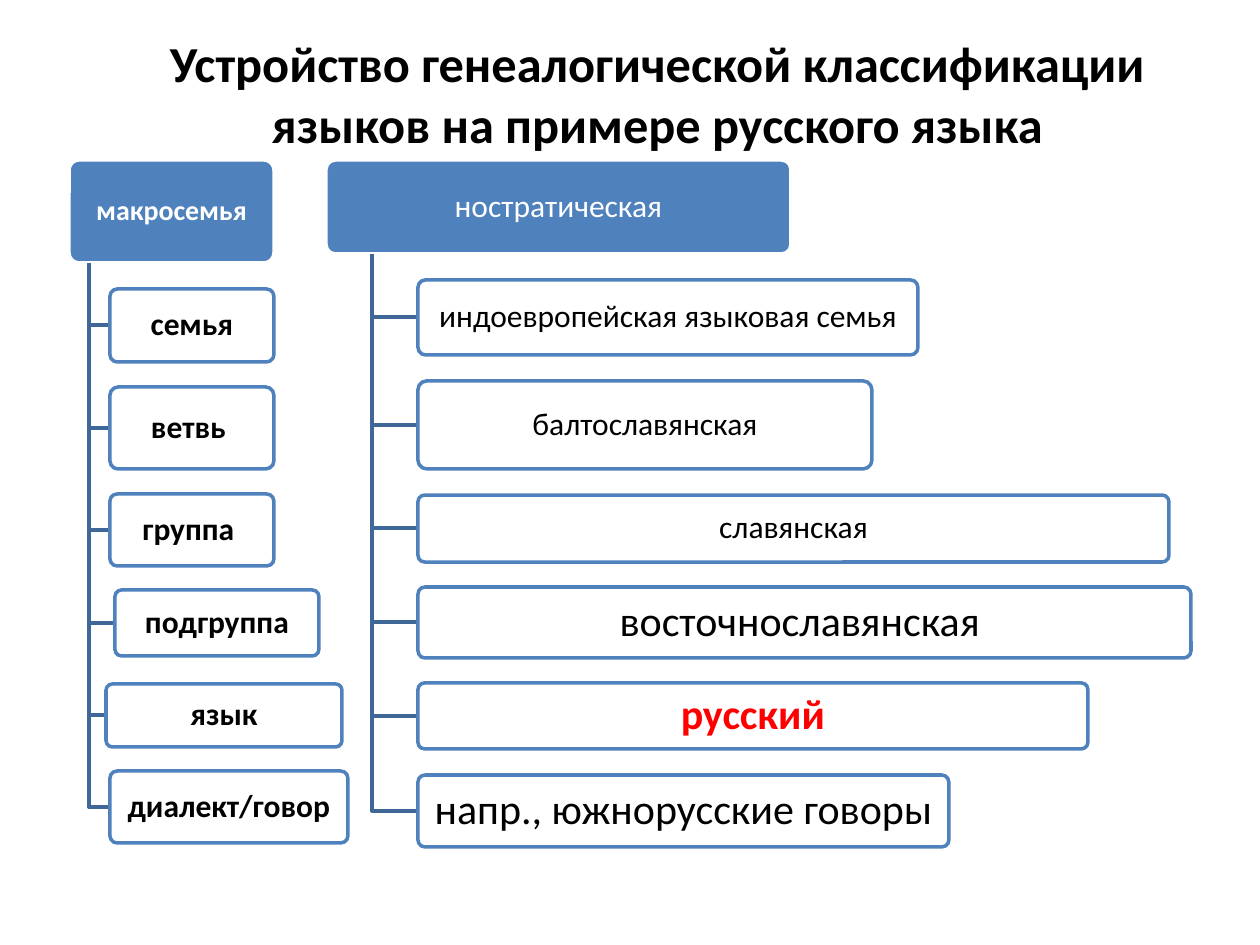
from dataclasses import dataclass

from lxml.etree import SubElement
from pptx import Presentation
from pptx.dml.color import RGBColor as Rgb
from pptx.enum.shapes import MSO_SHAPE as Preset
from pptx.enum.text import MSO_ANCHOR as Anchor, MSO_AUTO_SIZE as AutoSize, PP_ALIGN as Align
from pptx.oxml.ns import qn
from pptx.slide import Slide
from pptx.text.text import TextFrame
from pptx.util import Emu, Pt

PX_PER_INCH = 126


@dataclass(frozen=True)
class Theme:
    font: str = "Calibri"
    ink: Rgb = Rgb(0, 0, 0)
    paper: Rgb = Rgb(0xFF, 0xFF, 0xFF)
    accent: Rgb = Rgb(0x4F, 0x81, 0xBD)
    branch: Rgb = Rgb(0x3F, 0x67, 0x97)
    highlight: Rgb = Rgb(0xFF, 0, 0)
    title_size: float = 28.8
    small: int = 16
    normal: int = 18
    large: int = 24
    line: int = 2
    child_alpha: int = 90000


THEME = Theme()


@dataclass(frozen=True)
class Box:
    text: str
    left: int
    top: int
    width: int
    height: int
    size: int = THEME.normal
    bold: bool = False
    color: Rgb = THEME.ink


@dataclass(frozen=True)
class Tree:
    root: Box
    trunk: int
    children: tuple[Box, ...]


def px(length: int) -> Emu:
    return Emu(round(length * 914400 / PX_PER_INCH))


def write(frame: TextFrame, text: str, size: float, bold: bool, color: Rgb) -> None:
    frame.word_wrap = True
    frame.auto_size = AutoSize.NONE
    frame.vertical_anchor = Anchor.MIDDLE
    paragraph = frame.paragraphs[0]
    paragraph.alignment = Align.CENTER
    run = paragraph.add_run()
    run.text = text
    run.font.name = THEME.font
    run.font.size = Pt(size)
    run.font.bold = bold
    run.font.color.rgb = color


def draw_box(slide: Slide, box: Box, fill: Rgb, outline: Rgb, alpha: int = 100000) -> None:
    card = slide.shapes.add_shape(Preset.ROUNDED_RECTANGLE, px(box.left), px(box.top),
                                  px(box.width), px(box.height))
    card.adjustments[0] = 0.1
    card.shadow.inherit = False
    card.fill.solid()
    card.fill.fore_color.rgb = fill
    if alpha < 100000:
        solid = card.fill._xPr.find(qn("a:solidFill"))
        SubElement(solid[0], qn("a:alpha"), val=str(alpha))
    card.line.color.rgb = outline
    card.line.width = Pt(THEME.line)
    frame = card.text_frame
    frame.margin_left = frame.margin_right = px(box.size // 4)
    frame.margin_top = frame.margin_bottom = px(3)
    write(frame, box.text, box.size, box.bold, box.color)
    frame.paragraphs[0].line_spacing = 0.9


def draw_branch(slide: Slide, tree: Tree, child: Box) -> None:
    start = tree.root.top + tree.root.height
    middle = child.top + child.height // 2
    builder = slide.shapes.build_freeform(px(tree.trunk), px(start))
    builder.add_line_segments(
        [(px(tree.trunk), px(middle)), (px(child.left), px(middle))], close=False)
    branch = builder.convert_to_shape()
    branch.shadow.inherit = False
    branch.fill.background()
    branch.line.color.rgb = THEME.branch
    branch.line.width = Pt(THEME.line)


def draw_tree(slide: Slide, tree: Tree) -> None:
    draw_box(slide, tree.root, THEME.accent, THEME.paper)
    for child in tree.children:
        draw_branch(slide, tree, child)
        draw_box(slide, child, THEME.paper, THEME.accent, THEME.child_alpha)


LEVELS = Tree(
    Box("макросемья", 69, 160, 205, 103, THEME.small, True, THEME.paper), 89,
    (
        Box("семья", 110, 289, 164, 73, bold=True),
        Box("ветвь ", 110, 387, 164, 82, bold=True),
        Box("группа ", 110, 494, 164, 72, bold=True),
        Box("подгруппа", 115, 590, 204, 66, bold=True),
        Box("язык", 106, 684, 236, 63, bold=True),
        Box("диалект/говор", 110, 771, 238, 72, bold=True),
    ),
)

RUSSIAN = Tree(
    Box("ностратическая", 326, 160, 465, 94, color=THEME.paper), 372,
    (
        Box("индоевропейская языковая семья", 418, 280, 500, 75),
        Box("балтославянская", 418, 381, 454, 88),
        Box("славянская", 418, 495, 751, 67),
        Box("восточнославянская ", 418, 587, 773, 71, THEME.large),
        Box("русский", 418, 683, 670, 66, THEME.large, True, THEME.highlight),
        Box("напр., южнорусские говоры", 418, 775, 531, 72, THEME.large),
    ),
)


def main() -> None:
    deck = Presentation()
    deck.slide_width, deck.slide_height = px(1260), px(945)
    slide = deck.slides.add_slide(deck.slide_layouts[5])
    title = slide.shapes.title
    title.left, title.top, title.width, title.height = px(118), px(38), px(1079), px(110)
    write(title.text_frame,
          "Устройство генеалогической классификации языков на примере русского языка",
          THEME.title_size, True, THEME.ink)
    for tree in (LEVELS, RUSSIAN):
        draw_tree(slide, tree)
    deck.save("out.pptx")


if __name__ == "__main__":
    main()
